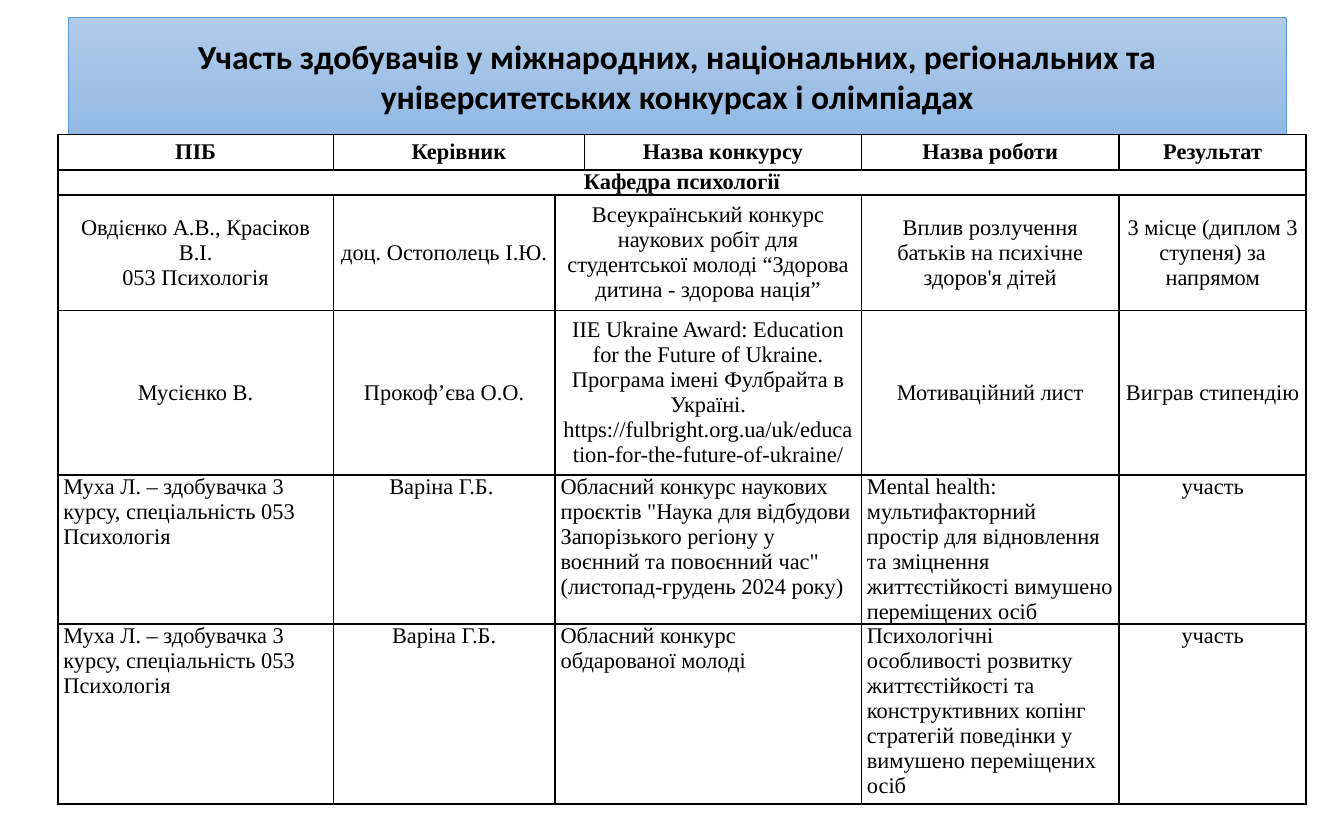
from lxml.etree import SubElement
from pptx import Presentation
from pptx.dml.color import RGBColor
from pptx.enum.text import MSO_ANCHOR as Anchor, MSO_AUTO_SIZE as AutoSize, PP_ALIGN as Align
from pptx.oxml import parse_xml
from pptx.oxml.ns import nsdecls, qn
from pptx.util import Pt

TITLE = "Участь здобувачів у міжнародних, національних, регіональних та університетських конкурсах і олімпіадах"
HEADINGS = ["ПІБ", "Керівник", "Назва конкурсу", "Назва роботи", "Результат"]
DEPARTMENT = "Кафедра психології"
STUDENT = "Муха Л. – здобувачка 3 курсу, спеціальність 053 Психологія"
CENTRED_ENTRIES = [
    [
        "Овдієнко А.В., Красіков В.І.\n053 Психологія",
        "доц. Остополець І.Ю.",
        "Всеукраїнський конкурс наукових робіт для студентської молоді “Здорова дитина - здорова нація”",
        "Вплив розлучення батьків на психічне здоров'я дітей",
        "3 місце (диплом 3 ступеня) за напрямом",
    ],
    [
        "Мусієнко В.",
        "Прокоф’єва О.О.",
        "IIE Ukraine Award: Education for the Future of Ukraine. Програма iменi Фулбрайта в Українi. "
        "https://fulbright.org.ua/uk/education-for-the-future-of-ukraine/",
        "Мотиваційний лист",
        "Виграв стипендію",
    ],
]
TOP_ENTRIES = [
    [
        STUDENT,
        "Варіна Г.Б. ",
        'Обласний конкурс наукових проєктів "Наука для відбудови Запорізького регіону у воєнний '
        'та повоєнний час" (листопад-грудень 2024 року)',
        "Mental health: мультифакторний простір для відновлення та зміцнення життєстійкості "
        "вимушено переміщених осіб",
        "участь",
    ],
    [
        STUDENT,
        "Варіна Г.Б.",
        "Обласний конкурс обдарованої молоді",
        "Психологічні особливості розвитку життєстійкості та конструктивних копінг стратегій "
        "поведінки у вимушено переміщених осіб",
        "участь",
    ],
]
COLUMN_WIDTHS = [147.6, 118.8, 15.8, 148.3, 138.2, 100.1]
ROW_HEIGHTS = [19, 13, 62, 88, 79.4, 96.5]
HEADING_STARTS = [0, 1, 3, 4, 5]
ENTRY_STARTS = [0, 1, 2, 4, 5]
CENTRED = [Align.CENTER] * 5
MIXED = [Align.LEFT, Align.CENTER, Align.LEFT, Align.LEFT, Align.CENTER]


def colour(value):
    return RGBColor.from_string(value)


def add_text(para, text, font_name, size, bold, align):
    para.alignment = align
    span = para.add_run()
    span.text = text
    span.font.name = font_name
    span.font.size = Pt(size)
    span.font.bold = bold
    span.font.color.rgb = colour("000000")


def place_title(page, left, top, width, height):
    arrow = page.shapes.title
    arrow.left, arrow.top, arrow.width, arrow.height = Pt(left), Pt(top), Pt(width), Pt(height)
    outline = parse_xml(f'<a:prstGeom {nsdecls("a")} prst="homePlate"><a:avLst/></a:prstGeom>')
    arrow.element.spPr.insert(1, outline)
    arrow.fill.gradient()
    arrow.fill.gradient_angle = 270
    for stop, value in zip(arrow.fill.gradient_stops, ["B1CBE9", "93B9E4"]):
        stop.color.rgb = colour(value)
    arrow.line.color.rgb = colour("5B9BD5")
    arrow.line.width = Pt(0.5)
    frame = arrow.text_frame
    frame.word_wrap = True
    frame.auto_size = AutoSize.NONE
    frame.vertical_anchor = Anchor.MIDDLE
    add_text(frame.paragraphs[0], TITLE, "Calibri", 18, True, Align.CENTER)


def add_borders(cell):
    properties = cell._tc.get_or_add_tcPr()
    for index, side in enumerate(["lnL", "lnR", "lnT", "lnB"]):
        border = SubElement(properties, qn(f"a:{side}"), w=str(Pt(1)))
        solid = SubElement(border, qn("a:solidFill"))
        SubElement(solid, qn("a:srgbClr"), val="000000")
        properties.insert(index, border)


def fill_row(table, row, starts, texts, bold, anchor, aligns):
    ends = starts[1:] + [len(COLUMN_WIDTHS)]
    for start, end, text, align in zip(starts, ends, texts, aligns):
        cell = table.cell(row, start)
        if end - start > 1:
            cell.merge(table.cell(row, end - 1))
        cell.vertical_anchor = anchor
        frame = cell.text_frame
        for number, line in enumerate(text.split("\n")):
            para = frame.add_paragraph() if number else frame.paragraphs[0]
            add_text(para, line, "Times New Roman", 12, bold, align)


def place_results(page, left, top, width, height):
    table = page.shapes.add_table(
        len(ROW_HEIGHTS), len(COLUMN_WIDTHS), Pt(left), Pt(top), Pt(width), Pt(height)
    ).table
    table.first_row = table.horz_banding = False
    for column, share in zip(table.columns, COLUMN_WIDTHS):
        column.width = Pt(width * share / sum(COLUMN_WIDTHS))
    for row, share in zip(table.rows, ROW_HEIGHTS):
        row.height = Pt(height * share / sum(ROW_HEIGHTS))
    for cell in table.iter_cells():
        cell.fill.solid()
        cell.fill.fore_color.rgb = colour("FFFFFF")
        cell.margin_left = cell.margin_right = Pt(3)
        cell.margin_top = cell.margin_bottom = Pt(0)
        add_borders(cell)
    fill_row(table, 0, HEADING_STARTS, HEADINGS, True, Anchor.MIDDLE, CENTRED)
    fill_row(table, 1, [0], [DEPARTMENT], True, Anchor.TOP, CENTRED)
    for row, texts in enumerate(CENTRED_ENTRIES, 2):
        fill_row(table, row, ENTRY_STARTS, texts, False, Anchor.MIDDLE, CENTRED)
    for row, texts in enumerate(TOP_ENTRIES, 2 + len(CENTRED_ENTRIES)):
        fill_row(table, row, ENTRY_STARTS, texts, False, Anchor.TOP, MIXED)


def main():
    deck = Presentation()
    deck.slide_width, deck.slide_height = Pt(720), Pt(450)
    page = deck.slides.add_slide(deck.slide_layouts[5])
    place_title(page, 36.7, 9.4, 652.3, 62.6)
    place_results(page, 31, 72, 668.8, 357.9)
    deck.save("out.pptx")


if __name__ == "__main__":
    main()
